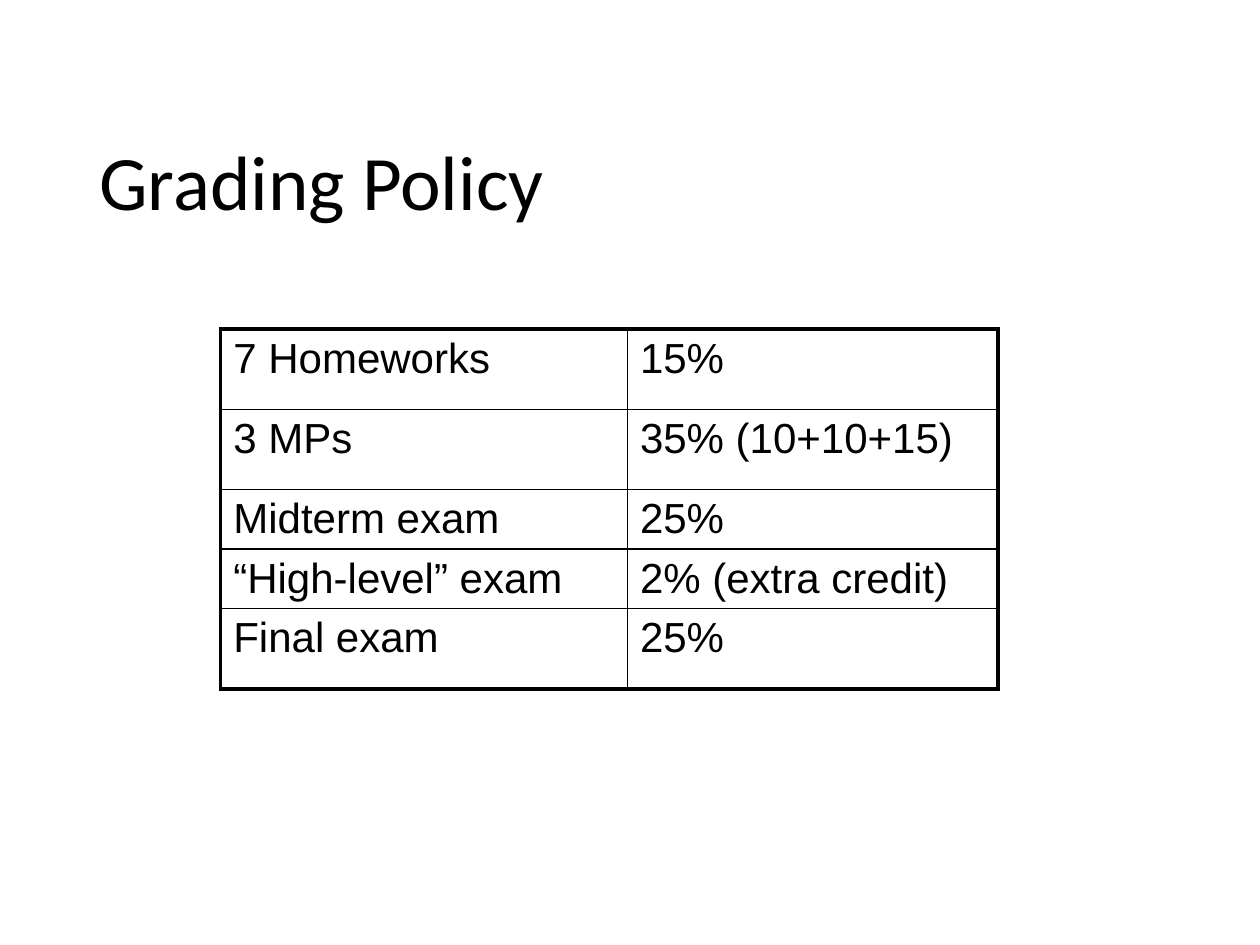
import pptx
import pptx.dml.color
import pptx.enum.text
import pptx.oxml
import pptx.oxml.ns
import pptx.util
from dataclasses import dataclass
from pptx.util import Cm


@dataclass(frozen=True)
class Theme:
    ink: str = "000000"
    title_font: str = "Calibri"
    body_font: str = "Arial"
    title_size: float = 44
    body_size: float = 24
    outer_line: float = 2.25
    inner_line: float = 1


THEME = Theme()
GRADES = [
    ("7 Homeworks", "15%"),
    ("3 MPs", "35% (10+10+15)"),
    ("Midterm exam", "25%"),
    ("“High-level” exam", "2% (extra credit)"),
    ("Final exam", "25%"),
]
COL_WIDTHS = (8.2, 7.47)
TALL, SHORT = 1.62, 0.81
ROW_HEIGHTS = (TALL, TALL, SHORT, SHORT, TALL)


def set_attrs(obj, values):
    for name, value in values.items():
        setattr(obj, name, value)


def style_paragraph(p, font, size, **layout):
    set_attrs(p, {"alignment": pptx.enum.text.PP_ALIGN.LEFT, **layout})
    for r in p.runs:
        set_attrs(r.font, {"name": font, "size": pptx.util.Pt(size), "bold": False})
        r.font.color.rgb = pptx.dml.color.RGBColor.from_string(THEME.ink)


def add_title(s, text):
    sp = s.shapes.title
    set_attrs(sp, {"left": Cm(1.75), "top": Cm(1.02),
                   "width": Cm(21.9), "height": Cm(3.68)})
    tf = sp.text_frame
    tf.text = text
    set_attrs(tf, {"word_wrap": True,
                   "auto_size": pptx.enum.text.MSO_AUTO_SIZE.NONE,
                   "vertical_anchor": pptx.enum.text.MSO_ANCHOR.BOTTOM})
    style_paragraph(tf.paragraphs[0], THEME.title_font, THEME.title_size,
                    line_spacing=0.9)


def set_borders(cell, outer_sides):
    """Draw heavy lines on the outer sides and thin lines on the others."""
    tc_pr = cell._tc.get_or_add_tcPr()
    ns = pptx.oxml.ns.nsdecls("a")
    for i, side in enumerate("LRTB"):
        width = THEME.outer_line if side in outer_sides else THEME.inner_line
        line = pptx.oxml.parse_xml(
            f'<a:ln{side} {ns} w="{pptx.util.Pt(width)}"><a:solidFill>'
            f'<a:srgbClr val="{THEME.ink}"/></a:solidFill></a:ln{side}>')
        tc_pr.insert(i, line)  # borders come before the fill


def add_grade_table(s, rows):
    n_rows, n_cols = len(rows), len(COL_WIDTHS)
    frame = s.shapes.add_table(n_rows, n_cols, Cm(4.45), Cm(6.63),
                               Cm(sum(COL_WIDTHS)), Cm(sum(ROW_HEIGHTS)))
    table = frame.table
    set_attrs(table, {"first_row": False, "horz_banding": False})
    for col, width in zip(table.columns, COL_WIDTHS):
        col.width = Cm(width)
    for row, height in zip(table.rows, ROW_HEIGHTS):
        row.height = Cm(height)

    for i, texts in enumerate(rows):
        for j, text in enumerate(texts):
            cell = table.cell(i, j)
            cell.text = text
            cell.fill.background()
            style_paragraph(cell.text_frame.paragraphs[0],
                            THEME.body_font, THEME.body_size)
            edges = {"L": j == 0, "R": j == n_cols - 1,
                     "T": i == 0, "B": i == n_rows - 1}
            set_borders(cell, [side for side, outer in edges.items() if outer])


def main():
    prs = pptx.Presentation()
    set_attrs(prs, {"slide_width": Cm(25.4), "slide_height": Cm(19.05)})
    s = prs.slides.add_slide(prs.slide_layouts.get_by_name("Title Only"))

    # Heading
    add_title(s, "Grading Policy")

    # Share of the grade for each piece of work
    add_grade_table(s, GRADES)

    prs.save("out.pptx")


if __name__ == "__main__":
    main()
